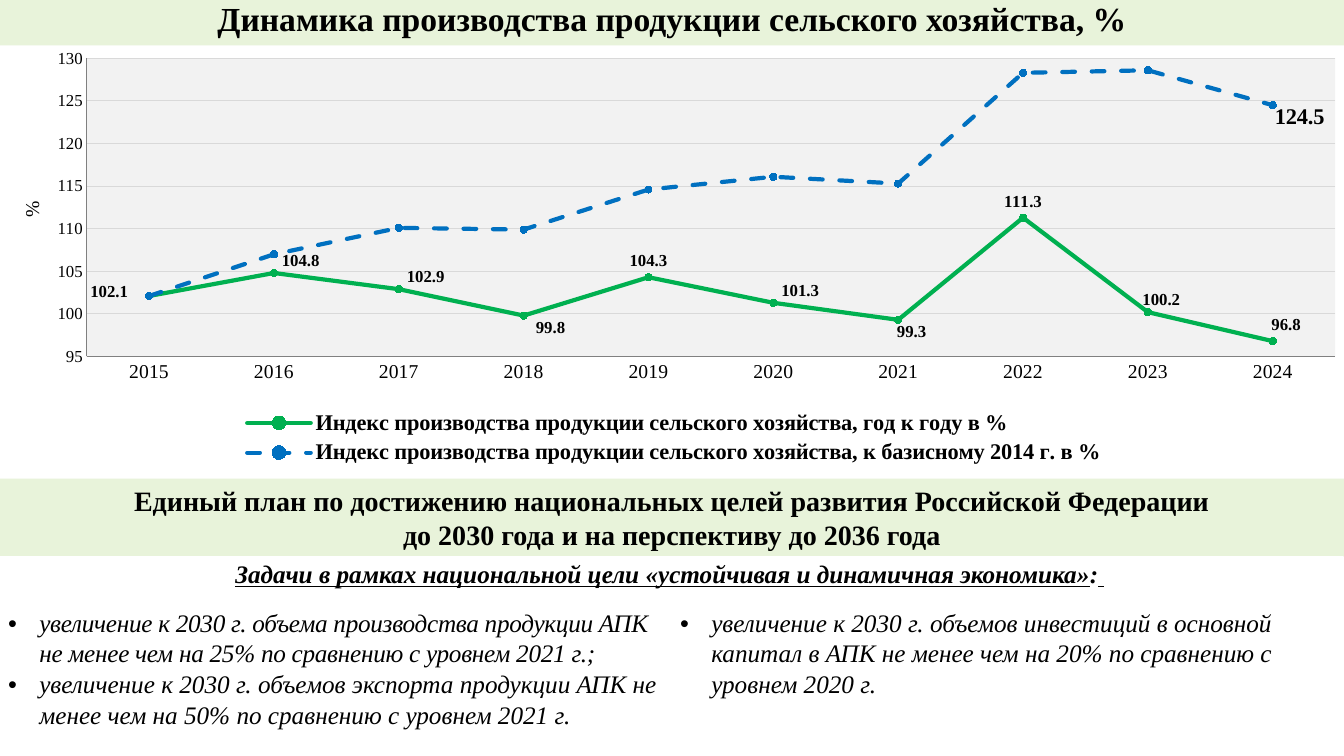
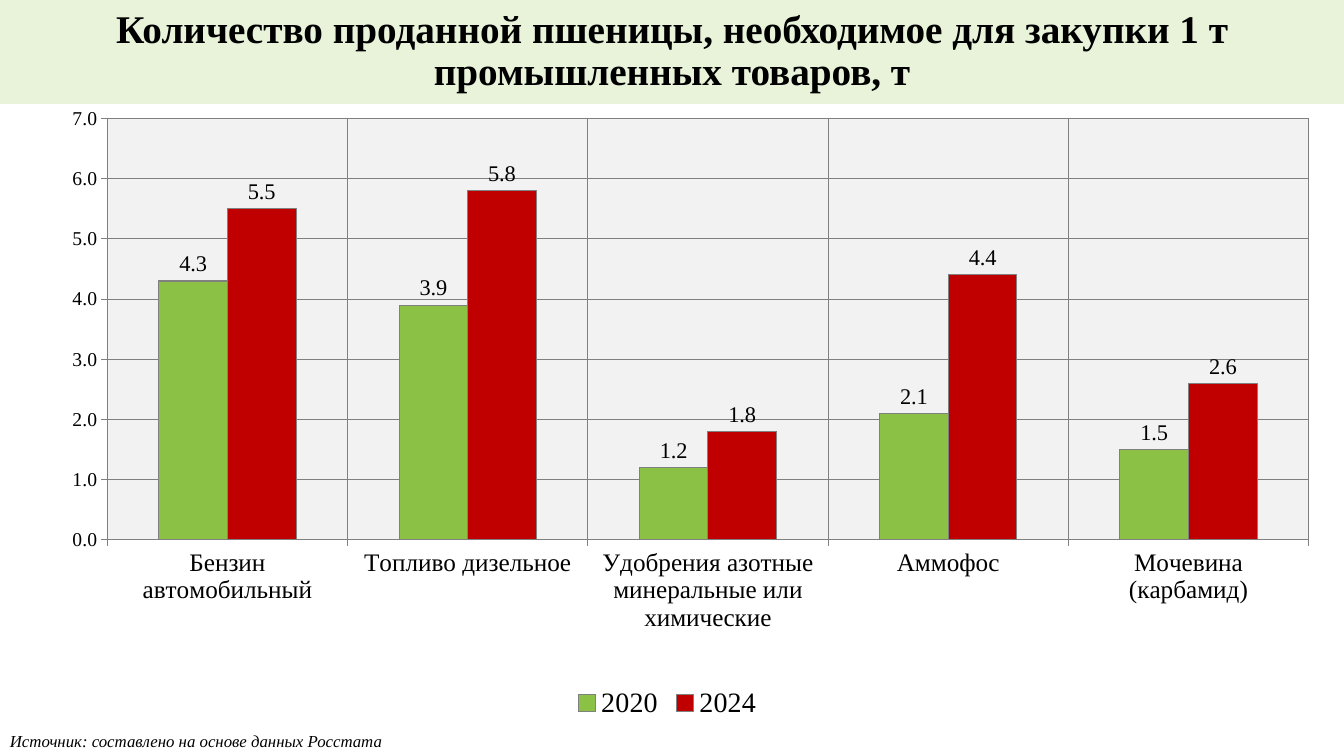
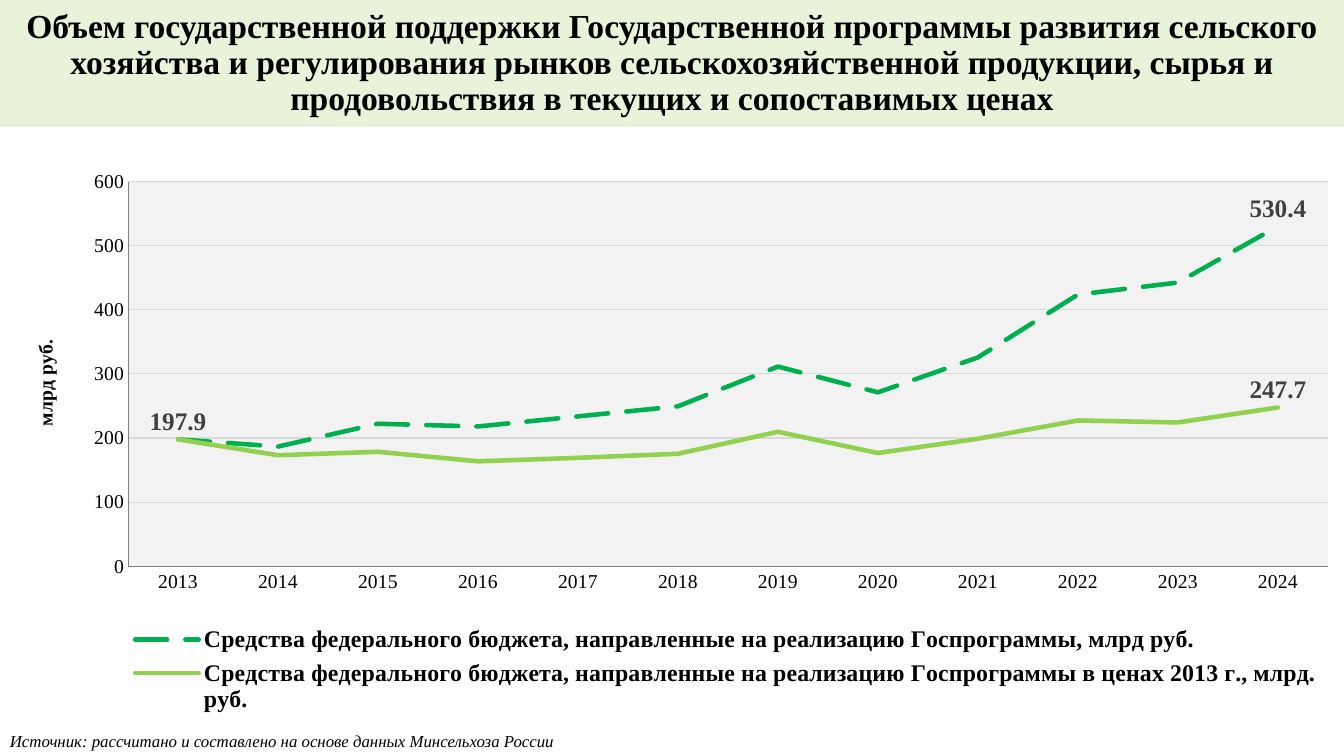
from lxml import etree
from pptx import Presentation
from pptx.chart.data import CategoryChartData
from pptx.dml.color import RGBColor
from pptx.enum.chart import XL_CHART_TYPE as ChartType
from pptx.enum.chart import XL_LABEL_POSITION as LabelAt
from pptx.enum.chart import XL_LEGEND_POSITION as LegendAt
from pptx.enum.chart import XL_MARKER_STYLE as Marker
from pptx.enum.chart import XL_TICK_MARK as Tick
from pptx.enum.dml import MSO_LINE as Dash
from pptx.enum.shapes import MSO_SHAPE as Shape
from pptx.enum.text import MSO_ANCHOR as Anchor
from pptx.enum.text import MSO_AUTO_SIZE as AutoSize
from pptx.enum.text import PP_ALIGN as Align
from pptx.oxml import parse_xml
from pptx.oxml.ns import nsdecls, qn
from pptx.util import Inches, Pt

# Shared look
FONT = "Times New Roman"
BLACK = RGBColor(0x00, 0x00, 0x00)
WHITE = RGBColor(0xFF, 0xFF, 0xFF)
DARK_GRAY = RGBColor(0x40, 0x40, 0x40)
AXIS_GRAY = RGBColor(0x80, 0x80, 0x80)
GRID_GRAY = RGBColor(0xD9, 0xD9, 0xD9)
PLOT_GRAY = RGBColor(0xF2, 0xF2, 0xF2)
BAND_GREEN = RGBColor(0xE8, 0xF3, 0xDA)
GREEN = RGBColor(0x00, 0xB0, 0x50)
LIGHT_GREEN = RGBColor(0x92, 0xD0, 0x50)
LEAF_GREEN = RGBColor(0x8B, 0xC1, 0x45)
BLUE = RGBColor(0x00, 0x70, 0xC0)
RED = RGBColor(0xC0, 0x00, 0x00)

SLIDE_WIDTH, SLIDE_HEIGHT = Inches(13.33), Inches(7.5)
TITLE_ONLY = 5


def place(left, top, width, height):
    """Turn percentages of the slide into lengths."""
    return (int(SLIDE_WIDTH * left / 100), int(SLIDE_HEIGHT * top / 100),
            int(SLIDE_WIDTH * width / 100), int(SLIDE_HEIGHT * height / 100))


def set_font(font, size, bold=False, italic=False, color=BLACK):
    font.name, font.size, font.bold, font.italic = FONT, Pt(size), bold, italic
    font.color.rgb = color


# Text elements
def format_band(shape, box, lines, size, spacing=0.9):
    shape.left, shape.top, shape.width, shape.height = box
    shape.fill.solid()
    shape.fill.fore_color.rgb = BAND_GREEN
    shape.line.fill.background()
    frame = shape.text_frame
    frame.word_wrap, frame.auto_size = True, AutoSize.NONE
    frame.vertical_anchor = Anchor.MIDDLE
    frame.text = "\n".join(lines)
    for para in frame.paragraphs:
        para.alignment, para.line_spacing = Align.CENTER, spacing
        para.space_before = Pt(0)
        set_font(para.font, size, bold=True)


def add_titled_slide(deck, title, top, height, size):
    page = deck.slides.add_slide(deck.slide_layouts[TITLE_ONLY])
    format_band(page.shapes.title, place(0, top, 100, height), [title], size)
    return page


def add_band(page, top, height, lines, size):
    box = place(0, top, 100, height)
    band = page.shapes.add_shape(Shape.RECTANGLE, *box)
    band.shadow.inherit = False
    format_band(band, box, lines, size, spacing=1)


def add_source_note(page, text):
    frame = page.shapes.add_textbox(*place(0, 96, 100, 4)).text_frame
    frame.word_wrap = True
    frame.text = text
    set_font(frame.paragraphs[0].font, 12, italic=True)


def add_bullets(cell, items):
    """Fill a cell with (text, letter spacing in hundredths of a point)."""
    cell.text = "\n".join(text for text, _ in items)
    for para, (_, tracking) in zip(cell.text_frame.paragraphs, items):
        para.line_spacing = 1.1
        set_font(para.font, 18, italic=True)
        para.runs[0]._r.get_or_add_rPr().set("spc", str(tracking))
        props = para._p.get_or_add_pPr()
        props.set("marL", str(Inches(0.31)))
        props.set("indent", str(-Inches(0.31)))
        bullet_font = etree.SubElement(props, qn("a:buFont"))
        bullet_font.set("typeface", "Arial")
        etree.SubElement(props, qn("a:buChar")).set("char", "•")
        props.append(props.find(qn("a:defRPr")))


def add_task_table(page, heading, columns):
    table = page.shapes.add_table(
        2, len(columns), *place(-0.15, 73.6, 100, 27.33)).table
    table.rows[0].height, table.rows[1].height = Inches(0.45), Inches(1.6)
    for cell in table.iter_cells():
        cell.fill.solid()
        cell.fill.fore_color.rgb = WHITE
    head = table.cell(0, 0)
    head.merge(table.cell(0, len(columns) - 1))
    para = head.text_frame.paragraphs[0]
    para.alignment = Align.CENTER
    set_font(para.font, 18, bold=True, italic=True)
    for text, underlined in heading:
        span = para.add_run()
        span.text, span.font.underline = text, underlined
    for column, items in enumerate(columns):
        add_bullets(table.cell(1, column), items)


# Chart elements
def make_layout(x, y, width=None, height=None, inner=False, edge=True):
    """Build a manual layout from shares of the chart."""
    layout = parse_xml(
        f'<c:layout {nsdecls("c")}><c:manualLayout/></c:layout>')
    settings = [("layoutTarget", "inner" if inner else None),
                ("xMode", "edge" if edge else None),
                ("yMode", "edge" if edge else None),
                ("x", x), ("y", y), ("w", width), ("h", height)]
    for name, value in settings:
        if value is not None:
            etree.SubElement(layout[0], qn(f"c:{name}")).set("val", str(value))
    return layout


def set_layout(parent, after, layout):
    """Put the layout behind the named child, or first if there is none."""
    for old in parent.findall(qn("c:layout")):
        parent.remove(old)
    child = parent.find(qn(after)) if after else None
    parent.insert(0 if child is None else parent.index(child) + 1, layout)


def set_plot_area(chart, plot_box):
    area = chart._chartSpace.chart.plotArea
    set_layout(area, None, make_layout(*plot_box, inner=True))
    area.append(parse_xml(
        f'<c:spPr {nsdecls("c", "a")}><a:solidFill>'
        f'<a:srgbClr val="{PLOT_GRAY}"/></a:solidFill></c:spPr>'))


def format_axis(axis, size, tick, grid=None):
    set_font(axis.tick_labels.font, size)
    axis.major_tick_mark, axis.minor_tick_mark = tick, Tick.NONE
    axis.format.line.color.rgb = AXIS_GRAY
    axis.format.line.width = Pt(0.75)
    axis.has_major_gridlines = grid is not None
    if grid is not None:
        axis.major_gridlines.format.line.color.rgb = grid
        axis.major_gridlines.format.line.width = Pt(0.75)


def set_scale(axis, low, high, step, number_format):
    axis.minimum_scale, axis.maximum_scale = low, high
    axis.major_unit = step
    axis.tick_labels.number_format = number_format
    axis.tick_labels.number_format_is_linked = False


def title_axis(axis, text, corner, bold=False):
    frame = axis.axis_title.text_frame
    frame.text = text
    set_font(frame.paragraphs[0].font, 14, bold=bold)
    title = axis.axis_title._element
    body = title.xpath(".//a:bodyPr")[0]
    body.set("rot", "-5400000")
    body.set("vert", "horz")
    set_layout(title, "c:tx", make_layout(*corner))


def add_chart(page, kind, box, categories, series, plot_box, legend_size,
              legend_bold=False):
    data = CategoryChartData()
    data.categories = categories
    for name, values in series:
        data.add_series(name, values)
    chart = page.shapes.add_chart(kind, *place(*box), data).chart
    chart.has_title = False
    set_font(chart.font, 11)
    chart.has_legend = True
    chart.legend.position = LegendAt.BOTTOM
    chart.legend.include_in_layout = False
    set_font(chart.legend.font, legend_size, bold=legend_bold)
    chart.plots[0].vary_by_categories = False
    set_plot_area(chart, plot_box)
    return chart


def format_line(series, color, width, dash=None, marker=False):
    series.smooth = False
    line = series.format.line
    line.color.rgb, line.width = color, Pt(width)
    if dash is not None:
        line.dash_style = dash
    series._element.xpath("./c:spPr/a:ln")[0].set("cap", "rnd")
    if marker:
        series.marker.style, series.marker.size = Marker.CIRCLE, 5
        series.marker.format.fill.solid()
        series.marker.format.fill.fore_color.rgb = color
        series.marker.format.line.color.rgb = color


def label_points(series, labels, size, color=BLACK):
    """Label points by index with (position, shift right, shift down)."""
    for index, (position, right, down) in labels.items():
        label = series.points[index].data_label
        set_font(label.font, size, bold=True, color=color)
        label.position = position
        if right or down:
            node = series._element.xpath(
                f'./c:dLbls/c:dLbl[c:idx/@val="{index}"]')[0]
            set_layout(node, "c:idx", make_layout(right, down, edge=False))
    series.data_labels.show_value = False
    for leader in series._element.xpath("./c:dLbls/c:showLeaderLines"):
        leader.set("val", "0")


# Slides
def build_output_slide(deck):
    page = add_titled_slide(
        deck, "Динамика производства продукции сельского хозяйства, %",
        -0.67, 6.67, 24)
    chart = add_chart(
        page, ChartType.LINE_MARKERS, (0.15, 5.87, 100, 56.27),
        [str(year) for year in range(2015, 2025)],
        [("Индекс производства продукции сельского хозяйства, год к году в %",
          (102.1, 104.8, 102.9, 99.8, 104.3, 101.3, 99.3, 111.3, 100.2, 96.8)),
         ("Индекс производства продукции сельского хозяйства, "
          "к базисному 2014 г. в %",
          (102.1, 107.0, 110.1, 109.9, 114.6, 116.1, 115.3, 128.3, 128.6,
           124.5))],
        (0.063, 0.033, 0.929, 0.701), 16, legend_bold=True)
    format_axis(chart.category_axis, 14, Tick.NONE)
    format_axis(chart.value_axis, 12, Tick.NONE, GRID_GRAY)
    set_scale(chart.value_axis, 95, 130, 5, "0")
    title_axis(chart.value_axis, "%", (0.01, 0.36))
    yearly, cumulative = chart.plots[0].series
    format_line(yearly, GREEN, 3, marker=True)
    format_line(cumulative, BLUE, 3, Dash.DASH, marker=True)
    above, below = LabelAt.ABOVE, LabelAt.BELOW
    label_points(yearly, {
        0: (LabelAt.LEFT, -0.01, -0.01), 1: (above, 0.02, 0.01),
        2: (above, 0.02, 0.01), 3: (below, 0.02, -0.01),
        4: (above, 0, 0), 5: (above, 0.02, 0.01),
        6: (below, 0.01, -0.01), 7: (above, 0, 0),
        8: (above, 0.01, 0.01), 9: (above, 0.01, 0)}, 12)
    label_points(cumulative, {9: (below, 0.02, -0.02)}, 16)

    add_band(page, 63.33, 10.27, [
        "Единый план по достижению национальных целей развития "
        "Российской Федерации",
        "до 2030 года и на перспективу до 2036 года"], 20)
    add_task_table(
        page,
        [("Задачи в рамках национальной цели "
          "«устойчивая и динамичная экономика»", True),
         (":", False), (" ", True)],
        [[("увеличение к 2030 г. объема производства продукции АПК "
           "не менее чем на 25% по сравнению с уровнем 2021 г.;", -20),
          ("увеличение к 2030 г. объемов экспорта продукции АПК "
           "не менее чем на 50% по сравнению с уровнем 2021 г.", 0)],
         [("увеличение к 2030 г. объемов инвестиций в основной капитал в АПК "
           "не менее чем на 20% по сравнению с уровнем 2020 г.", 0)]])


def build_wheat_slide(deck):
    page = add_titled_slide(
        deck, "Количество проданной пшеницы, необходимое для закупки 1 т "
        "промышленных товаров, т", 0, 13.73, 28)
    add_source_note(page, "Источник: составлено на основе данных Росстата")
    chart = add_chart(
        page, ChartType.COLUMN_CLUSTERED, (0.75, 13.73, 97.8, 82.13),
        ["Бензин автомобильный", "Топливо дизельное",
         "Удобрения азотные минеральные или химические",
         "Аммофос", "Мочевина (карбамид)"],
        [("2020", (4.3, 3.9, 1.2, 2.1, 1.5)),
         ("2024", (5.5, 5.8, 1.8, 4.4, 2.6))],
        (0.074, 0.024, 0.914, 0.678), 20)
    format_axis(chart.category_axis, 18, Tick.OUTSIDE, AXIS_GRAY)
    format_axis(chart.value_axis, 14, Tick.OUTSIDE, AXIS_GRAY)
    set_scale(chart.value_axis, 0, 7, 1, "0.0")
    plot = chart.plots[0]
    plot.gap_width, plot.overlap = 150, 0
    for series, color in zip(plot.series, (LEAF_GREEN, RED)):
        series.format.fill.solid()
        series.format.fill.fore_color.rgb = color
        series.format.line.color.rgb = AXIS_GRAY
        series.format.line.width = Pt(0.75)
        labels = series.data_labels
        labels.show_value, labels.position = True, LabelAt.OUTSIDE_END
        labels.number_format = "#,##0.0"
        labels.number_format_is_linked = False
        set_font(labels.font, 16)


def build_support_slide(deck):
    page = add_titled_slide(
        deck, "Объем государственной поддержки Государственной программы "
        "развития сельского хозяйства и регулирования рынков "
        "сельскохозяйственной продукции, сырья и продовольствия в текущих "
        "и сопоставимых ценах", 0, 16.8, 24)
    add_source_note(page, "Источник: рассчитано и составлено на основе "
                    "данных Минсельхоза России")
    chart = add_chart(
        page, ChartType.LINE, (0.15, 17.87, 99.75, 78.13),
        [str(year) for year in range(2013, 2025)],
        [("Средства федерального бюджета, направленные на реализацию "
          "Госпрограммы, млрд руб.",
          (197.9, 186.6, 222.3, 218.1, 233.8, 249.5, 311.5, 271.3, 325.8,
           423.9, 442.6, 530.4)),
         ("Средства федерального бюджета, направленные на реализацию "
          "Госпрограммы в ценах 2013 г., млрд. руб.",
          (197.9, 173.1, 178.5, 163.6, 169.1, 175.4, 209.7, 176.6, 198.8,
           227.4, 224.3, 247.7))],
        (0.094, 0.079, 0.895, 0.651), 17, legend_bold=True)
    set_layout(chart.legend._element, "c:legendPos",
               make_layout(0.09, 0.82, 0.9, 0.17))
    format_axis(chart.category_axis, 14, Tick.NONE)
    format_axis(chart.value_axis, 14, Tick.NONE, GRID_GRAY)
    set_scale(chart.value_axis, 0, 600, 100, "0")
    title_axis(chart.value_axis, "млрд руб.", (0.02, 0.34), bold=True)
    current, comparable = chart.plots[0].series
    format_line(current, GREEN, 3.25, Dash.LONG_DASH)
    format_line(comparable, LIGHT_GREEN, 3.25)
    centered = (LabelAt.ABOVE, 0, 0)
    label_points(current, {11: centered}, 18, DARK_GRAY)
    label_points(comparable, {0: centered, 11: centered}, 18, DARK_GRAY)


def main():
    deck = Presentation()
    deck.slide_width, deck.slide_height = SLIDE_WIDTH, SLIDE_HEIGHT
    build_output_slide(deck)
    build_wheat_slide(deck)
    build_support_slide(deck)
    deck.save("out.pptx")


if __name__ == "__main__":
    main()
